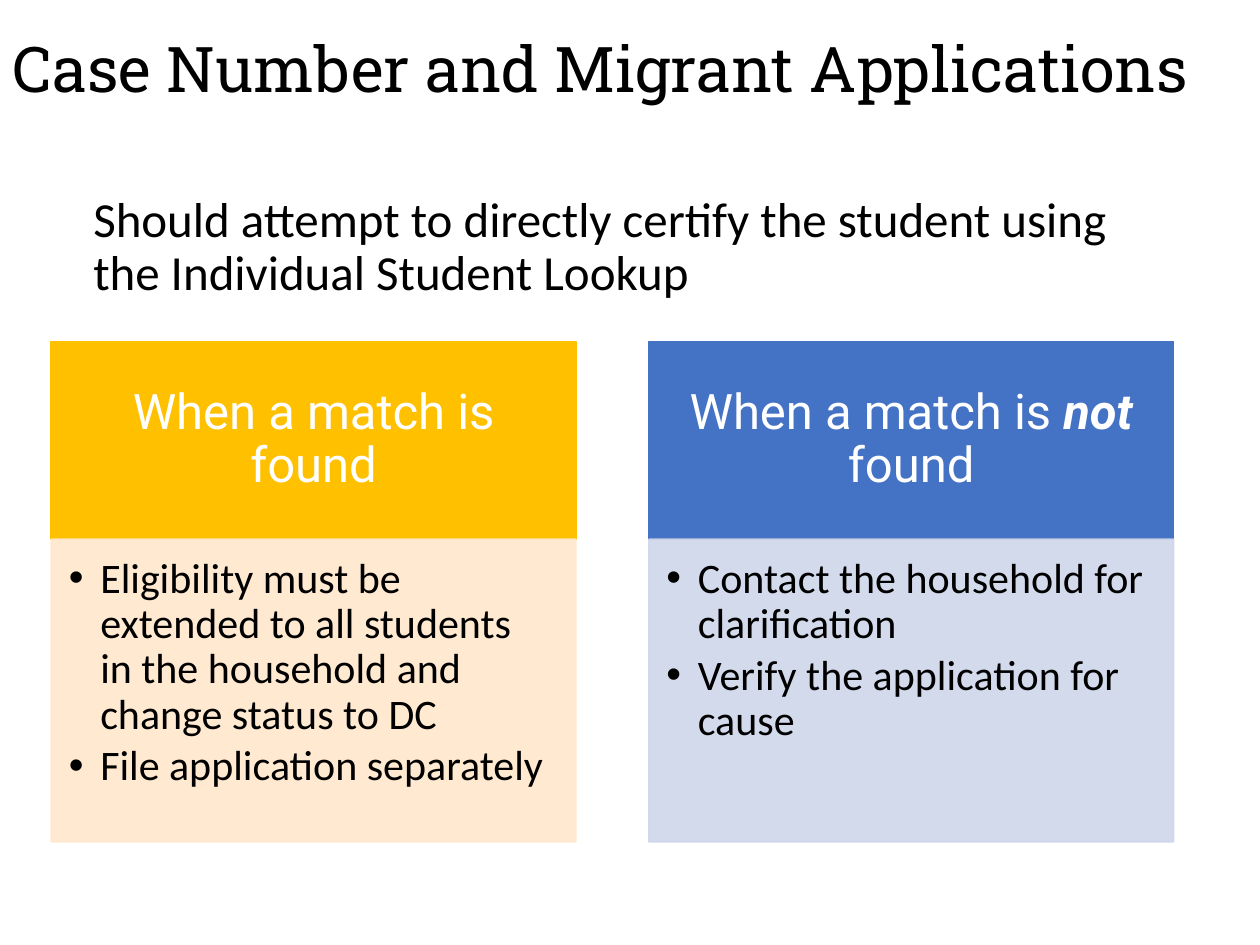
import pptx
import pptx.util
import pptx.dml.color
import pptx.enum.shapes
import pptx.enum.text
import pptx.oxml.ns
from lxml import etree

Pt = pptx.util.Pt
ALIGN = pptx.enum.text.PP_ALIGN
ANCHOR = pptx.enum.text.MSO_ANCHOR
qn = pptx.oxml.ns.qn

COLORS = {
    "text": "000000", "header_text": "FFFFFF",
    "found": "FFC000", "found_panel": "FFE8CC",
    "not_found": "4472C4", "not_found_panel": "CFD6EA",
}
CARD_W, CARD_TOP, HEADER_H, PANEL_H = 299.8, 195.1, 113.1, 172.8
CARD_LEFT, CARD_STEP = 29.3, 341.5
CARDS = [
    ("found", [("When a match is found", False)],
     ["Eligibility must be extended to all students in the household and change status to DC",
      "File application separately"]),
    ("not_found", [("When a match is ", False), ("not", True), (" found", False)],
     ["Contact the household for clarification",
      "Verify the application for cause"]),
]


def rgb(name):
    return pptx.dml.color.RGBColor.from_string(COLORS[name])


def format_paragraph(p, font, size, color, align=ALIGN.LEFT, after=0):
    p.alignment = align
    p.line_spacing = 0.9
    p.space_before = Pt(0)
    p.space_after = Pt(after)
    for r in p.runs:
        r.font.name = font
        r.font.size = Pt(size)
        r.font.color.rgb = rgb(color)


def set_margins(tf, left, top, right, bottom):
    tf.margin_left, tf.margin_top = Pt(left), Pt(top)
    tf.margin_right, tf.margin_bottom = Pt(right), Pt(bottom)


def set_bullet(p, char=None):
    """Give the paragraph a hanging bullet, or none at all."""
    pPr = p._p.get_or_add_pPr()
    indent = Pt(18) if char else 0
    pPr.set("marL", str(indent))
    pPr.set("indent", str(-indent))
    if char:
        etree.SubElement(pPr, qn("a:buFont")).set("typeface", "Arial")
        etree.SubElement(pPr, qn("a:buChar")).set("char", char)
    else:
        etree.SubElement(pPr, qn("a:buNone"))


def fill_placeholder(sp, box, text, font, size):
    sp.left, sp.top, sp.width, sp.height = (Pt(v) for v in box)
    tf = sp.text_frame
    tf.text = text
    tf.word_wrap = True
    tf.auto_size = pptx.enum.text.MSO_AUTO_SIZE.NONE
    tf.vertical_anchor = ANCHOR.TOP
    set_bullet(tf.paragraphs[0])
    format_paragraph(tf.paragraphs[0], font, size, "text")
    return tf


def add_rect(slide, left, top, height, color, opacity=100):
    sp = slide.shapes.add_shape(pptx.enum.shapes.MSO_SHAPE.RECTANGLE,
                                Pt(left), Pt(top), Pt(CARD_W), Pt(height))
    sp.shadow.inherit = False
    sp.fill.solid()
    sp.fill.fore_color.rgb = rgb(color)
    sp.line.color.rgb = rgb(color)
    sp.line.width = Pt(1)
    if opacity < 100:
        for clr in sp._element.spPr.iter(qn("a:srgbClr")):
            etree.SubElement(clr, qn("a:alpha")).set("val", str(opacity * 1000))
    sp.text_frame.word_wrap = True
    return sp


def add_header(slide, left, color, parts):
    tf = add_rect(slide, left, CARD_TOP, HEADER_H, color).text_frame
    tf.vertical_anchor = ANCHOR.MIDDLE
    set_margins(tf, 15.7, 9, 15.7, 9)
    p = tf.paragraphs[0]
    for text, strong in parts:
        r = p.add_run()
        r.text = text
        r.font.bold = r.font.italic = strong
    format_paragraph(p, "Roboto", 28, "header_text", ALIGN.CENTER)


def add_panel(slide, left, color, items):
    tf = add_rect(slide, left, CARD_TOP + HEADER_H, PANEL_H, color, 90).text_frame
    tf.vertical_anchor = ANCHOR.TOP
    set_margins(tf, 10, 10, 13.5, 15)
    tf.text = "\n".join(items)
    for p in tf.paragraphs:
        set_bullet(p, "•")
        format_paragraph(p, "Calibri", 24, "text", after=3.6)


def main():
    prs = pptx.Presentation()
    prs.slide_width, prs.slide_height = Pt(720), Pt(540)
    slide = prs.slides.add_slide(prs.slide_layouts[1])
    title = fill_placeholder(slide.shapes.title, (0, 21.6, 729.4, 56.2),
                             "Case Number and Migrant Applications", "Roboto Slab", 36)
    title.margin_top = 0
    fill_placeholder(slide.placeholders[1], (46.1, 108, 624.2, 327.6),
                     "Should attempt to directly certify the student using "
                     "the Individual Student Lookup", "Calibri", 28)
    for i, (name, header, items) in enumerate(CARDS):
        left = CARD_LEFT + i * CARD_STEP
        add_header(slide, left, name, header)
        add_panel(slide, left, name + "_panel", items)
    prs.save("out.pptx")


if __name__ == "__main__":
    main()
